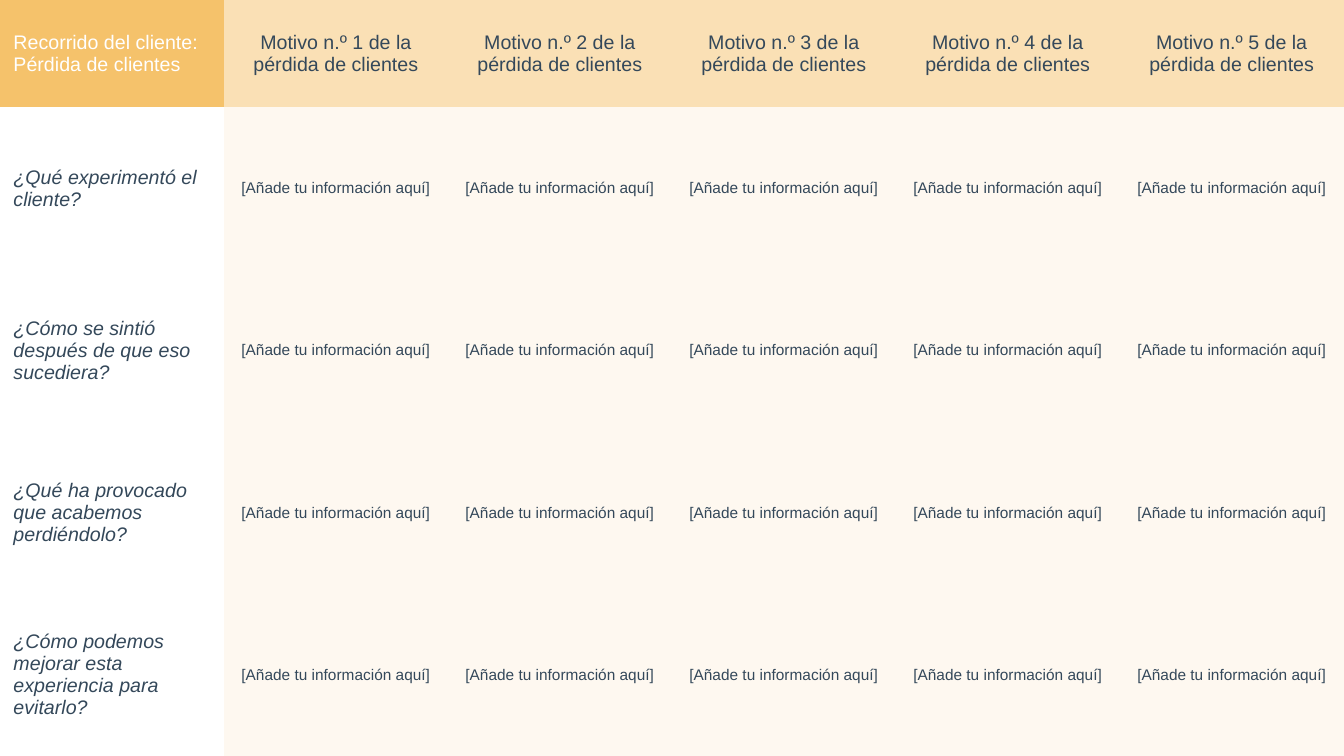
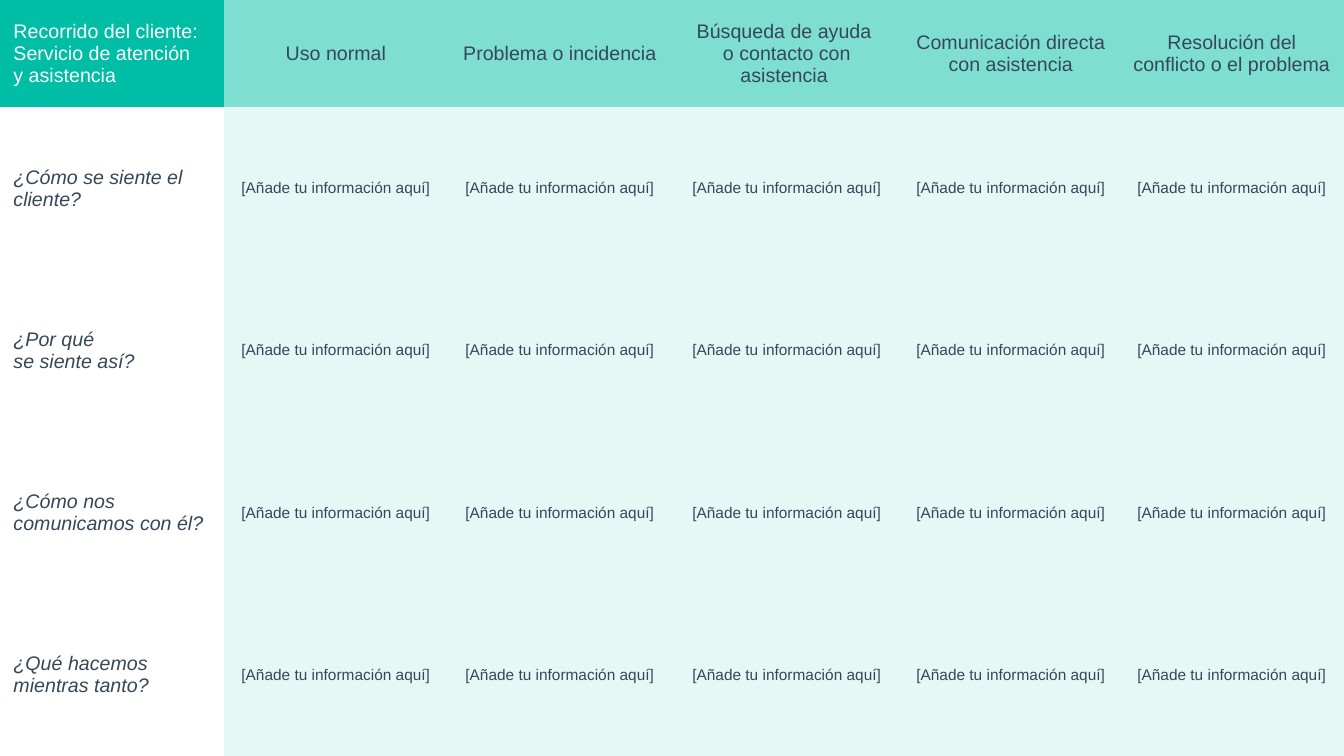
"""Build two customer journey tables that share one layout."""

from dataclasses import dataclass

from pptx import Presentation
from pptx.dml.color import RGBColor
from pptx.enum.text import MSO_ANCHOR, PP_ALIGN
from pptx.oxml.ns import qn
from pptx.slide import Slide
from pptx.table import _Cell as Cell
from pptx.util import Cm, Pt

PAGE_WIDTH, PAGE_HEIGHT = 33.87, 19.05
HEADER_HEIGHT = 2.7
MARGIN = 0.34
FONT = "Arial"
WHITE, INK = "FFFFFF", "34485A"
PLACEHOLDER = "[Añade tu información aquí]"
NO_STYLE = "{2D5ABB26-0587-4C30-8999-92F81FD0307C}"


@dataclass(frozen=True)
class TextStyle:
    size: int = 14
    color: str = INK
    italic: bool = False
    align: PP_ALIGN = PP_ALIGN.CENTER


@dataclass(frozen=True)
class Palette:
    title: str
    header: str
    body: str


@dataclass(frozen=True)
class Journey:
    title: str
    stages: list[str]
    questions: list[str]
    palette: Palette
    column_widths: list[float]


TITLE = TextStyle(color=WHITE, align=PP_ALIGN.LEFT)
STAGE = TextStyle()
QUESTION = TextStyle(italic=True, align=PP_ALIGN.LEFT)
ANSWER = TextStyle(size=11)

EQUAL_WIDTHS = [PAGE_WIDTH / 6] * 6
WIDE_FOURTH = [width + shift for width, shift in zip(EQUAL_WIDTHS, [0, 0, 0, 0.15, -0.15, 0])]

JOURNEYS = [
    Journey(
        title="Recorrido del cliente: Pérdida de clientes",
        stages=[f"Motivo n.º {number} de la pérdida de clientes" for number in range(1, 6)],
        questions=[
            "¿Qué experimentó el cliente?",
            "¿Cómo se sintió después de que eso sucediera?",
            "¿Qué ha provocado que acabemos perdiéndolo?",
            "¿Cómo podemos mejorar esta experiencia para evitarlo?",
        ],
        palette=Palette(title="F5C26B", header="FAE0B5", body="FEF8F0"),
        column_widths=EQUAL_WIDTHS,
    ),
    Journey(
        title="Recorrido del cliente: Servicio de atención\ny asistencia",
        stages=[
            "Uso normal",
            "Problema o incidencia",
            "Búsqueda de ayuda \no contacto con asistencia ",
            "Comunicación directa con asistencia",
            "Resolución del conflicto o el problema",
        ],
        questions=[
            "¿Cómo se siente el cliente?",
            "¿Por qué\nse siente así?",
            "¿Cómo nos comunicamos con él?",
            "¿Qué hacemos mientras tanto?",
        ],
        palette=Palette(title="00BDA5", header="7FDED2", body="E5F8F6"),
        column_widths=WIDE_FOURTH,
    ),
]


def rgb(color: str) -> RGBColor:
    return RGBColor.from_string(color)


def fill_cell(cell: Cell, text: str, style: TextStyle, fill: str | None = None) -> None:
    cell.vertical_anchor = MSO_ANCHOR.MIDDLE
    cell.margin_left = cell.margin_right = Cm(MARGIN)
    cell.margin_top = cell.margin_bottom = Cm(MARGIN)
    if fill:
        cell.fill.solid()
        cell.fill.fore_color.rgb = rgb(fill)
    else:
        cell.fill.background()
    frame = cell.text_frame
    for index, line in enumerate(text.split("\n")):
        para = frame.add_paragraph() if index else frame.paragraphs[0]
        para.alignment = style.align
        span = para.add_run()
        span.text = line
        span.font.name = FONT
        span.font.size = Pt(style.size)
        span.font.italic = style.italic
        span.font.color.rgb = rgb(style.color)


def add_journey_table(page: Slide, journey: Journey) -> None:
    row_count, column_count = len(journey.questions) + 1, len(journey.stages) + 1
    box = page.shapes.add_table(
        row_count, column_count, Cm(0), Cm(0), Cm(PAGE_WIDTH), Cm(PAGE_HEIGHT)
    )
    table = box.table
    table.first_row = table.horz_banding = False
    for style_id in box.element.iter(qn("a:tableStyleId")):
        style_id.text = NO_STYLE
    for column, width in zip(table.columns, journey.column_widths):
        column.width = Cm(width)
    body_height = (PAGE_HEIGHT - HEADER_HEIGHT) / len(journey.questions)
    for index, row in enumerate(table.rows):
        row.height = Cm(body_height if index else HEADER_HEIGHT)

    palette = journey.palette
    fill_cell(table.cell(0, 0), journey.title, TITLE, palette.title)
    for column_index, stage in enumerate(journey.stages, start=1):
        fill_cell(table.cell(0, column_index), stage, STAGE, palette.header)
    for row_index, question in enumerate(journey.questions, start=1):
        fill_cell(table.cell(row_index, 0), question, QUESTION)
        for column_index in range(1, column_count):
            fill_cell(table.cell(row_index, column_index), PLACEHOLDER, ANSWER, palette.body)


def main() -> None:
    deck = Presentation()
    deck.slide_width, deck.slide_height = Cm(PAGE_WIDTH), Cm(PAGE_HEIGHT)
    blank = deck.slide_layouts[6]
    for journey in JOURNEYS:
        add_journey_table(deck.slides.add_slide(blank), journey)
    deck.save("out.pptx")


if __name__ == "__main__":
    main()
